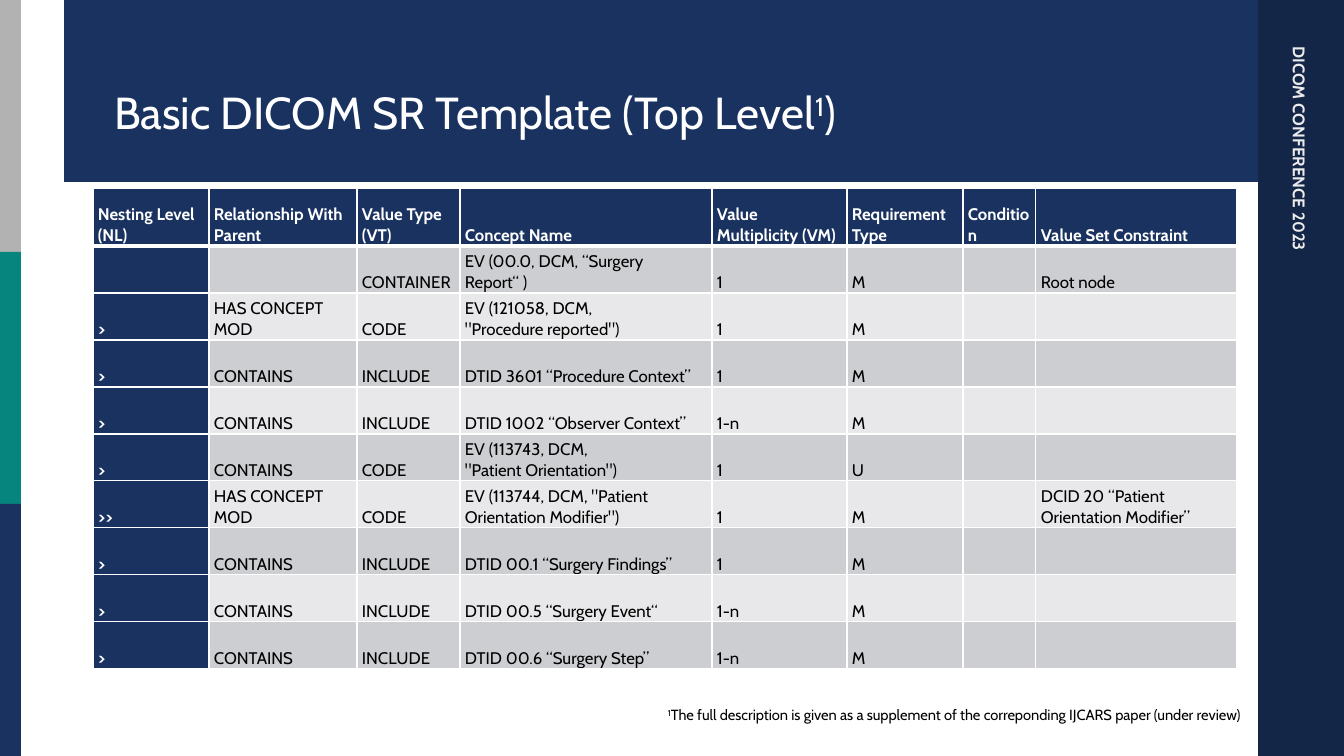
from lxml import etree
from pptx import Presentation
from pptx import util as u
from pptx.dml.color import RGBColor
from pptx.enum import shapes, text
from pptx.oxml import ns

PX = 9071.43  # EMU per px, 100.8 px to the inch
NAVY = RGBColor(0x1A, 0x32, 0x60)
DARK_NAVY = RGBColor(0x14, 0x26, 0x48)
GREY = RGBColor(0xB2, 0xB2, 0xB2)
TEAL = RGBColor(0x06, 0x84, 0x7E)
PALE = RGBColor(0xEB, 0xEB, 0xEB)
BAND_DARK = RGBColor(0xCD, 0xCE, 0xD2)
BAND_LIGHT = RGBColor(0xE8, 0xE8, 0xEA)
WHITE = RGBColor(0xFF, 0xFF, 0xFF)
BLACK = RGBColor(0, 0, 0)


def px(*lengths):
    return [u.Emu(round(n * PX)) for n in lengths]


def set_font(paragraph, size, color, bold=False):
    font = paragraph.font
    font.name, font.size, font.bold = "Cabin", u.Pt(size), bold
    font.color.rgb = color


prs = Presentation()
prs.slide_width, prs.slide_height = px(1344, 756)
slide = prs.slides.add_slide(prs.slide_layouts[5])

# Side bars and title band
for left, top, width, height, color in [
    (1258, 0, 86, 756, DARK_NAVY),
    (0, 0, 21, 252, GREY),
    (0, 252, 21, 252, TEAL),
    (0, 504, 21, 252, NAVY),
    (64, 0, 1194, 182, NAVY),
]:
    bar = slide.shapes.add_shape(
        shapes.MSO_SHAPE.RECTANGLE, *px(left, top, width, height))
    bar.shadow.inherit = False
    bar.fill.solid()
    bar.fill.fore_color.rgb = color
    bar.line.fill.background()

# Conference name, running down the right bar
conference = slide.shapes.add_textbox(*px(1070, 251, 459, 30))
conference.rotation = 90
conference.text_frame.word_wrap = True
conference_line = conference.text_frame.paragraphs[0]
conference_line.text = "DICOM CONFERENCE 2023"
set_font(conference_line, 12, PALE, bold=True)

# Title, brought in front of its band
title = slide.shapes.title
slide.shapes._spTree.append(title._element)
title.left, title.top, title.width, title.height = px(104, 41, 1112, 103)
title.text_frame.vertical_anchor = text.MSO_ANCHOR.BOTTOM
title.text_frame.auto_size = text.MSO_AUTO_SIZE.NONE
title_line = title.text_frame.paragraphs[0]
title_line.alignment = text.PP_ALIGN.LEFT
set_font(title_line, 32, WHITE)

# Footnote
footnote = slide.shapes.add_textbox(*px(107, 701, 1144, 28))
footnote.text_frame.word_wrap = True
footnote_line = footnote.text_frame.paragraphs[0]
footnote_line.alignment = text.PP_ALIGN.RIGHT
set_font(footnote_line, 10.5, BLACK)

# Wording of title and footnote, with the raised note mark
NOTE_MARK = "1"
for line, parts in [
    (title_line, ["Basic DICOM SR Template (Top Level", NOTE_MARK, ")"]),
    (footnote_line, [NOTE_MARK, "The full description is given as a supplement of "
                     "the correponding IJCARS paper (under review)"]),
]:
    for part in parts:
        run = line.add_run()
        run.text = part
        if part == NOTE_MARK:
            run._r.get_or_add_rPr().set("baseline", "30000")

# Template table
rows = [
    ("Nesting Level (NL)", "Relationship With Parent", "Value Type (VT)", "Concept Name",
     "Value Multiplicity (VM)", "Requirement Type", "Condition", "Value Set Constraint"),
    ("", "", "CONTAINER", "EV (00.0, DCM, “Surgery Report“ )", "1", "M", "", "Root node"),
    (">", "HAS CONCEPT MOD", "CODE", 'EV (121058, DCM, \n"Procedure reported")',
     "1", "M", "", ""),
    (">", "CONTAINS", "INCLUDE", "DTID 3601 “Procedure Context”", "1", "M", "", ""),
    (">", "CONTAINS", "INCLUDE", "DTID 1002 “Observer Context”", "1-n", "M", "", ""),
    (">", "CONTAINS", "CODE", 'EV (113743, DCM, \n"Patient Orientation")',
     "1", "U", "", ""),
    (">>", "HAS CONCEPT MOD", "CODE", 'EV (113744, DCM, "Patient Orientation Modifier")',
     "1", "M", "", "DCID 20 “Patient Orientation Modifier”"),
    (">", "CONTAINS", "INCLUDE", "DTID 00.1 “Surgery Findings”", "1", "M", "", ""),
    (">", "CONTAINS", "INCLUDE", "DTID 00.5 “Surgery Event“", "1-n", "M", "", ""),
    (">", "CONTAINS", "INCLUDE", "DTID 00.6 “Surgery Step”", "1-n", "M", "", ""),
]
column_widths = px(116, 148, 103, 252, 135, 116, 73, 201)
header_height, row_height, cell_inset = px(58, 47, 5)
table = slide.shapes.add_table(
    len(rows), len(column_widths), *px(93, 188, 1144, 481)).table
table.horz_banding = False
for column, width in zip(table.columns, column_widths):
    column.width = width

for r, row in enumerate(rows):
    table.rows[r].height = row_height if r else header_height
    for c, wording in enumerate(row):
        cell = table.cell(r, c)
        heading = r == 0 or c == 0

        # White rules, heavier under the header
        for side in ("lnL", "lnR", "lnT", "lnB"):
            heavy = (r, side) in [(0, "lnB"), (1, "lnT")]
            rule = etree.SubElement(cell._tc.get_or_add_tcPr(), ns.qn(f"a:{side}"),
                                    w=str(u.Pt(3 if heavy else 1)))
            rule_fill = etree.SubElement(rule, ns.qn("a:solidFill"))
            etree.SubElement(rule_fill, ns.qn("a:srgbClr"), val=str(WHITE))

        cell.fill.solid()
        cell.fill.fore_color.rgb = (
            NAVY if heading else BAND_DARK if r % 2 else BAND_LIGHT)
        cell.margin_left = cell.margin_right = cell_inset
        cell.margin_top = cell.margin_bottom = 0
        cell.vertical_anchor = text.MSO_ANCHOR.BOTTOM
        entry = cell.text_frame.paragraphs[0]
        entry.text = wording.replace("\n", "\v")
        entry.line_spacing = 1.03
        entry.space_after = u.Pt(4)
        set_font(entry, 12, WHITE if heading else BLACK, bold=heading)

prs.save("out.pptx")
